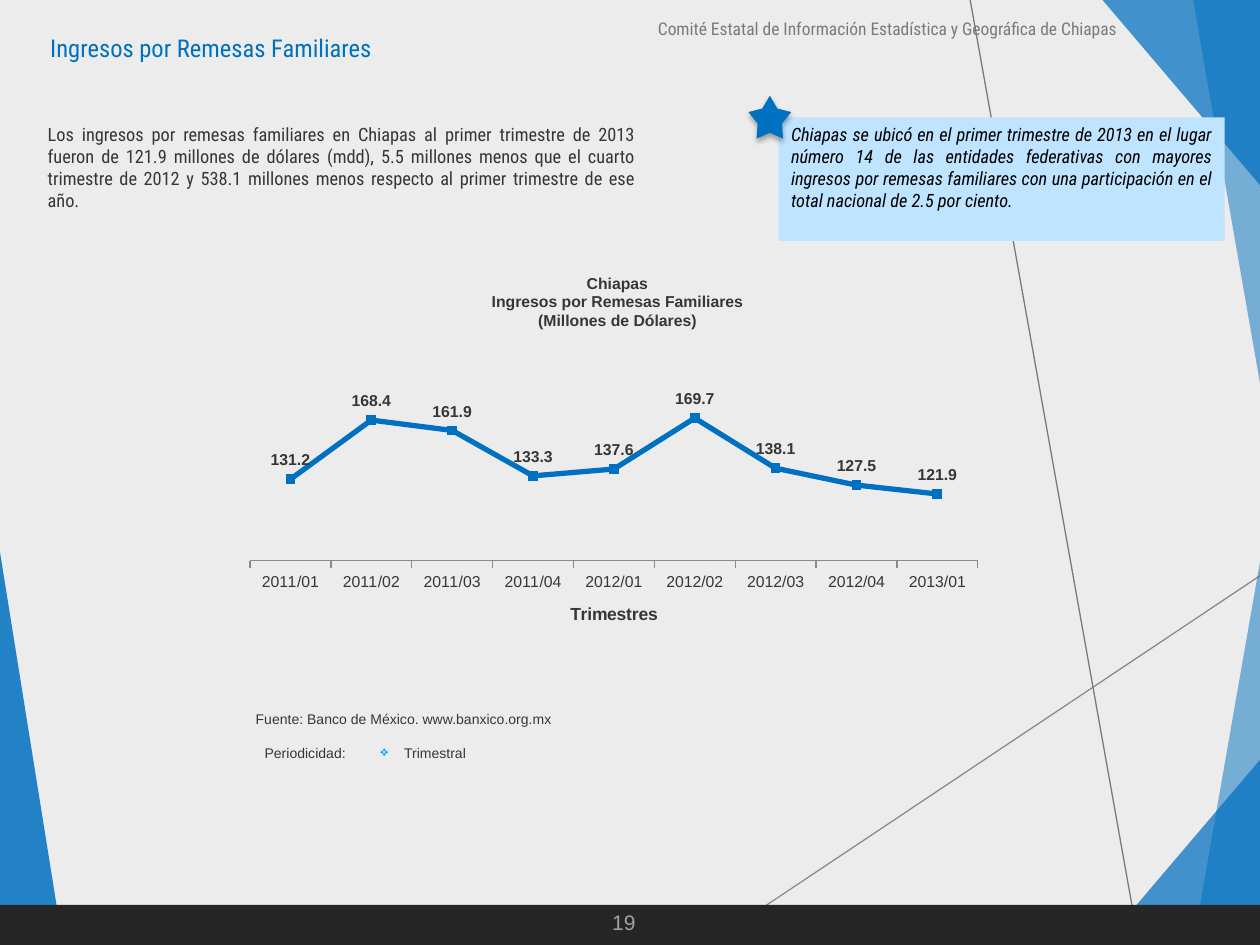
from lxml import etree
from pptx import Presentation
from pptx.chart.data import CategoryChartData
from pptx.dml.color import RGBColor
from pptx.enum import chart as ch, shapes, text
from pptx.oxml import parse_xml
from pptx.oxml.ns import nsdecls, qn
from pptx.util import Pt

BLUE = RGBColor(0x00, 0x70, 0xC0)
PALE_BLUE = RGBColor(0xBF, 0xE4, 0xFF)
PAPER = RGBColor(0xEC, 0xEC, 0xEC)
BLACK = RGBColor(0, 0, 0)
FOOTER = RGBColor(0x26, 0x26, 0x26)
INK = RGBColor(0x36, 0x36, 0x36)
GRAY = RGBColor(0x7A, 0x7A, 0x7A)
LIGHT_GRAY = RGBColor(0x8A, 0x8A, 0x8A)
PAGE_GRAY = RGBColor(0xA2, 0xA2, 0xA2)
SANS, CONDENSED = "Arial", "Roboto Condensed"
LEFT, RIGHT, JUSTIFY = text.PP_ALIGN.LEFT, text.PP_ALIGN.RIGHT, text.PP_ALIGN.JUSTIFY
W, H = 720, 540

LEFT_WEDGE = [(0, 315.4), (36, H), (0, 539.3)]
WIDE_CORNER = [(630, 0), (W, 105.8), (W, 0)]
TALL_CORNER = [(681.8, 0), (W, 218.9), (W, 0)]
RAYS = [((403.9, H), (W, 329), LIGHT_GRAY), ((554.4, 0), (650.9, H), GRAY)]

CALLOUT = ("Chiapas se ubicó en el primer trimestre de 2013 en el lugar número 14 de las "
           "entidades federativas con mayores ingresos por remesas familiares con una "
           "participación en el total nacional de 2.5 por ciento.")
SUMMARY = ("Los ingresos por remesas familiares en Chiapas al primer trimestre de 2013 fueron "
           "de 121.9 millones de dólares (mdd), 5.5 millones menos que el cuarto trimestre de "
           "2012 y 538.1 millones menos respecto al primer trimestre de ese año.")
TEXTS = [
    ("Comité Estatal de Información Estadística y Geográfica de Chiapas",
     (320.4, 6.5, 324.7, 19.4), 10, CONDENSED, GRAY, RIGHT),
    (SUMMARY, (20.2, 67, 349.9, 56.2), 10.5, CONDENSED, INK, JUSTIFY),
    ("Fuente: Banco de México. www.banxico.org.mx",
     (139, 402.5, 295.9, 17.3), 8, SANS, INK, LEFT),
    ("19", (342.7, 516.2, 28.1, 21.6), 12, SANS, PAGE_GRAY, LEFT),
    ("Ingresos por Remesas Familiares",
     (21.6, 15.1, 272.2, 28.1), 14, CONDENSED, BLUE, LEFT),
]
PERIOD = [("Periodicidad:", (151.2, 425.5, 46.8, 9.4), False),
          ("Trimestral", (217.4, 425.5, 49.7, 9.4), True)]

CHART_TITLE = ["Chiapas", "Ingresos por Remesas Familiares", "(Millones de Dólares)"]
QUARTERS = ["2011/01", "2011/02", "2011/03", "2011/04", "2012/01",
            "2012/02", "2012/03", "2012/04", "2013/01"]
REMITTANCES = [131.2, 168.4, 161.9, 133.3, 137.6, 169.7, 138.1, 127.5, 121.9]
PLOT = dict(x=0.022, y=0.381, w=0.947, h=0.411)


def paint(shape, color, alpha=100):
    shape.shadow.inherit = False
    shape.fill.solid()
    shape.fill.fore_color.rgb = color
    shape.line.fill.background()
    if alpha < 100:
        clr = shape._element.spPr.find(".//" + qn("a:srgbClr"))
        etree.SubElement(clr, qn("a:alpha")).set("val", str(alpha * 1000))


def polygon(s, points, alpha):
    fb = s.shapes.build_freeform(Pt(points[0][0]), Pt(points[0][1]))
    fb.add_line_segments([(Pt(x), Pt(y)) for x, y in points[1:]])
    paint(fb.convert_to_shape(), BLUE, alpha)


def style(font, size, color=INK, name=SANS, bold=False, italic=False):
    font.size, font.name = Pt(size), name
    font.bold, font.italic = bold, italic
    font.color.rgb = color


def write(sp, words, size, name, color, align, wrap=True, italic=False):
    tf = sp.text_frame
    tf.text = words
    tf.word_wrap = wrap
    tf.vertical_anchor = text.MSO_ANCHOR.TOP
    p = tf.paragraphs[0]
    p.alignment = align
    style(p.runs[0].font, size, color, name, italic=italic)
    return tf


def add_bullet(p):
    pPr = p._p.get_or_add_pPr()
    pPr.set("marL", str(Pt(13.5)))
    pPr.set("indent", str(-Pt(13.5)))
    clr = etree.SubElement(pPr, qn("a:buClr"))
    etree.SubElement(clr, qn("a:srgbClr")).set("val", "00B0F0")
    etree.SubElement(pPr, qn("a:buChar")).set("char", "❖")


def add_background(s):
    s.background.fill.solid()
    s.background.fill.fore_color.rgb = PAPER
    polygon(s, LEFT_WEDGE, 85)
    for start, end, color in RAYS:
        ray = s.shapes.add_connector(shapes.MSO_CONNECTOR.STRAIGHT,
                                     *[Pt(v) for v in start + end])
        ray.line.color.rgb = color
        ray.line.width = Pt(0.75)
        etree.SubElement(ray._element.spPr, qn("a:effectLst"))
    for mirrored in (True, False):
        for points, alpha in ((WIDE_CORNER, 72), (TALL_CORNER, 50)):
            polygon(s, [(x, H - y if mirrored else y) for x, y in points], alpha)
    bar = s.shapes.add_shape(shapes.MSO_SHAPE.RECTANGLE, 0, Pt(517), Pt(W), Pt(H - 517))
    paint(bar, FOOTER)


def add_texts(s):
    for words, box, size, name, color, align in TEXTS:
        sp = s.shapes.add_textbox(*map(Pt, box))
        write(sp, words, size, name, color, align, wrap=words != "19")
    for words, box, bulleted in PERIOD:
        sp = s.shapes.add_textbox(*map(Pt, box))
        tf = write(sp, words, 8, SANS, INK, LEFT, wrap=False)
        tf.margin_left = tf.margin_top = tf.margin_right = tf.margin_bottom = 0
        if bulleted:
            add_bullet(tf.paragraphs[0])


def add_callout(s):
    box = s.shapes.add_shape(shapes.MSO_SHAPE.RECTANGLE,
                             Pt(445), Pt(67), Pt(254.9), Pt(70.6))
    paint(box, PALE_BLUE)
    write(box, CALLOUT, 10.5, CONDENSED, BLACK, JUSTIFY, italic=True)
    star = s.shapes.add_shape(shapes.MSO_SHAPE.STAR_5_POINT,
                              Pt(427.7), Pt(54.7), Pt(24.5), Pt(24.5))
    star.adjustments[0] = 0.284
    paint(star, BLUE)
    effects = star._element.spPr.find(qn("a:effectLst"))
    effects.append(parse_xml(
        f'<a:outerShdw {nsdecls("a")} blurRad="{Pt(3.1)}" dist="{Pt(1.8)}" dir="5400000">'
        '<a:srgbClr val="000000"><a:alpha val="35000"/></a:srgbClr></a:outerShdw>'))


def fill_part(parent, before):
    spPr = parse_xml(f'<c:spPr {nsdecls("c", "a")}><a:solidFill><a:srgbClr val="{PAPER}"/>'
                     '</a:solidFill><a:ln><a:noFill/></a:ln></c:spPr>')
    following = parent.find(qn(before)) if before else None
    if following is None:
        parent.append(spPr)
    else:
        following.addprevious(spPr)


def add_remittance_chart(s):
    data = CategoryChartData(number_format="0.0")
    data.categories = QUARTERS
    data.add_series("Series 1", REMITTANCES)
    chart = s.shapes.add_chart(ch.XL_CHART_TYPE.LINE_MARKERS, Pt(133.2), Pt(145.4),
                               Pt(439.2), Pt(221), data).chart
    style(chart.font, 10)
    chart.has_legend = False
    tf = chart.chart_title.text_frame
    tf.text = "\n".join(CHART_TITLE)
    for p in tf.paragraphs:
        style(p.runs[0].font, 9, bold=True)

    cat, val = chart.category_axis, chart.value_axis
    cat.major_tick_mark = ch.XL_TICK_MARK.OUTSIDE
    cat.format.line.color.rgb = LIGHT_GRAY
    style(cat.tick_labels.font, 9)
    cat.axis_title.text_frame.text = "Trimestres"
    style(cat.axis_title.text_frame.paragraphs[0].runs[0].font, 10, bold=True)
    val.visible = val.has_major_gridlines = False
    val.minimum_scale, val.maximum_scale, val.major_unit = 80, 180, 50

    plot = chart.plots[0]
    plot.vary_by_categories = False
    series = plot.series[0]
    series.smooth = False
    series.format.line.color.rgb = BLUE
    series.format.line.width = Pt(3)
    marker = series.marker
    marker.style, marker.size = ch.XL_MARKER_STYLE.SQUARE, 5
    marker.format.fill.solid()
    marker.format.fill.fore_color.rgb = BLUE
    marker.format.line.color.rgb = BLUE
    labels = series.data_labels
    labels.show_value = True
    labels.number_format, labels.number_format_is_linked = "0.0", False
    labels.position = ch.XL_LABEL_POSITION.ABOVE
    style(labels.font, 9, bold=True)

    area = chart._chartSpace.chart.plotArea
    for old in area.findall(qn("c:layout")):
        area.remove(old)
    settings = dict(layoutTarget="inner", xMode="edge", yMode="edge", **PLOT)
    inner = "".join(f'<c:{key} val="{value}"/>' for key, value in settings.items())
    area.insert(0, parse_xml(f'<c:layout {nsdecls("c")}><c:manualLayout>{inner}'
                             '</c:manualLayout></c:layout>'))
    fill_part(area, None)
    fill_part(chart._chartSpace, "c:txPr")


def main():
    prs = Presentation()
    prs.slide_width, prs.slide_height = Pt(W), Pt(H)
    s = prs.slides.add_slide(prs.slide_layouts[6])
    add_background(s)
    add_texts(s)
    add_callout(s)
    add_remittance_chart(s)
    prs.save("out.pptx")


if __name__ == "__main__":
    main()
